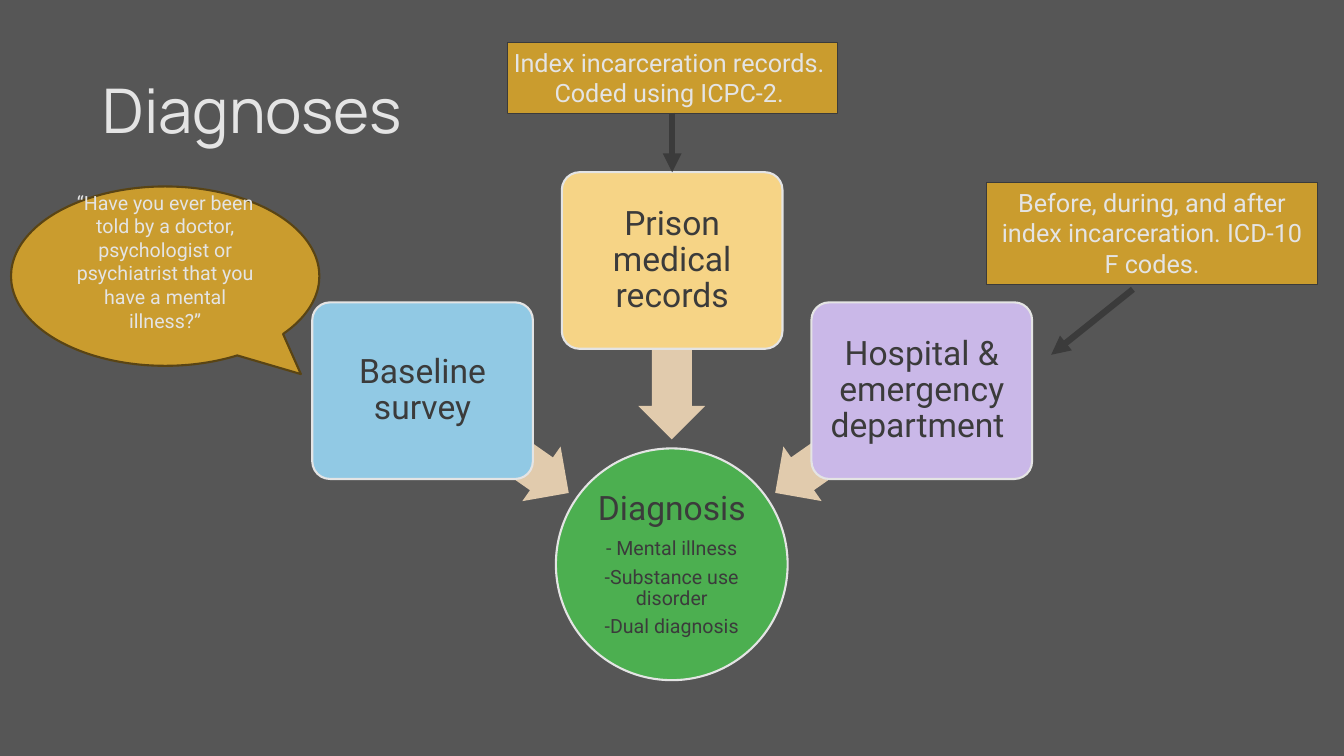
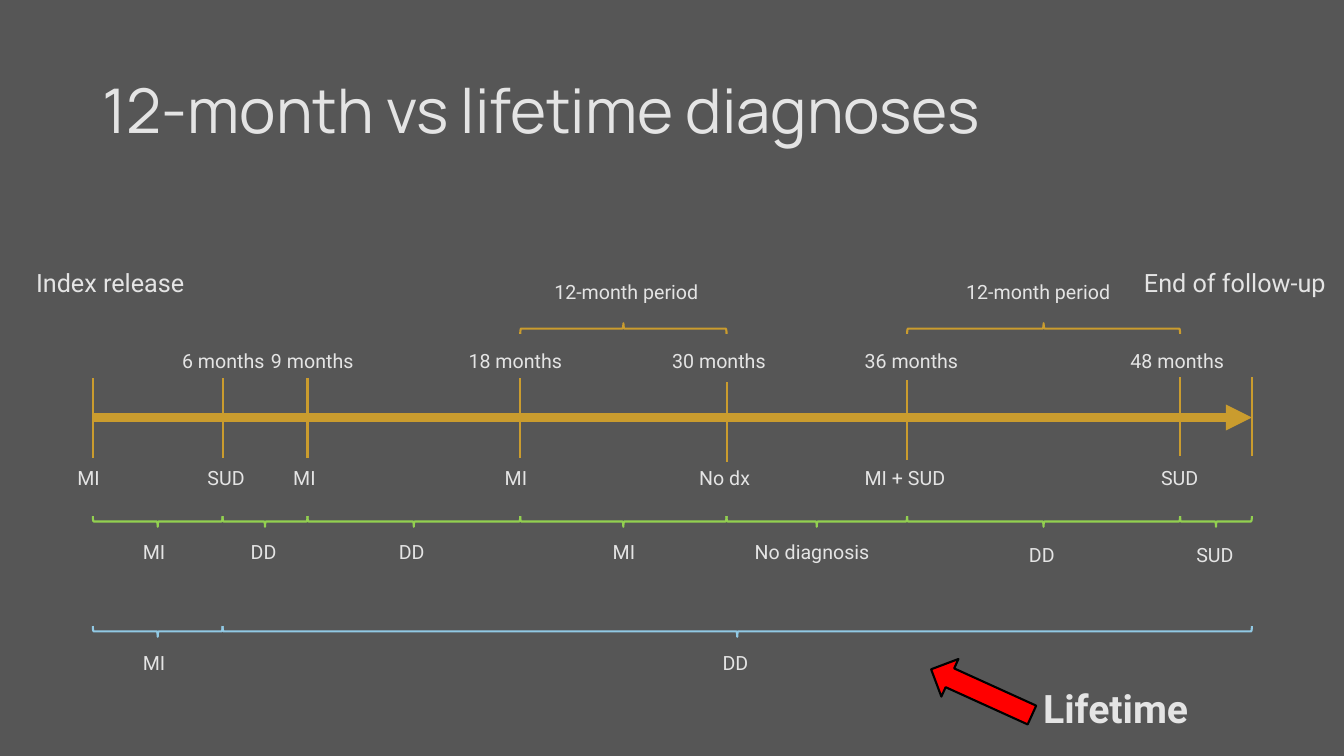
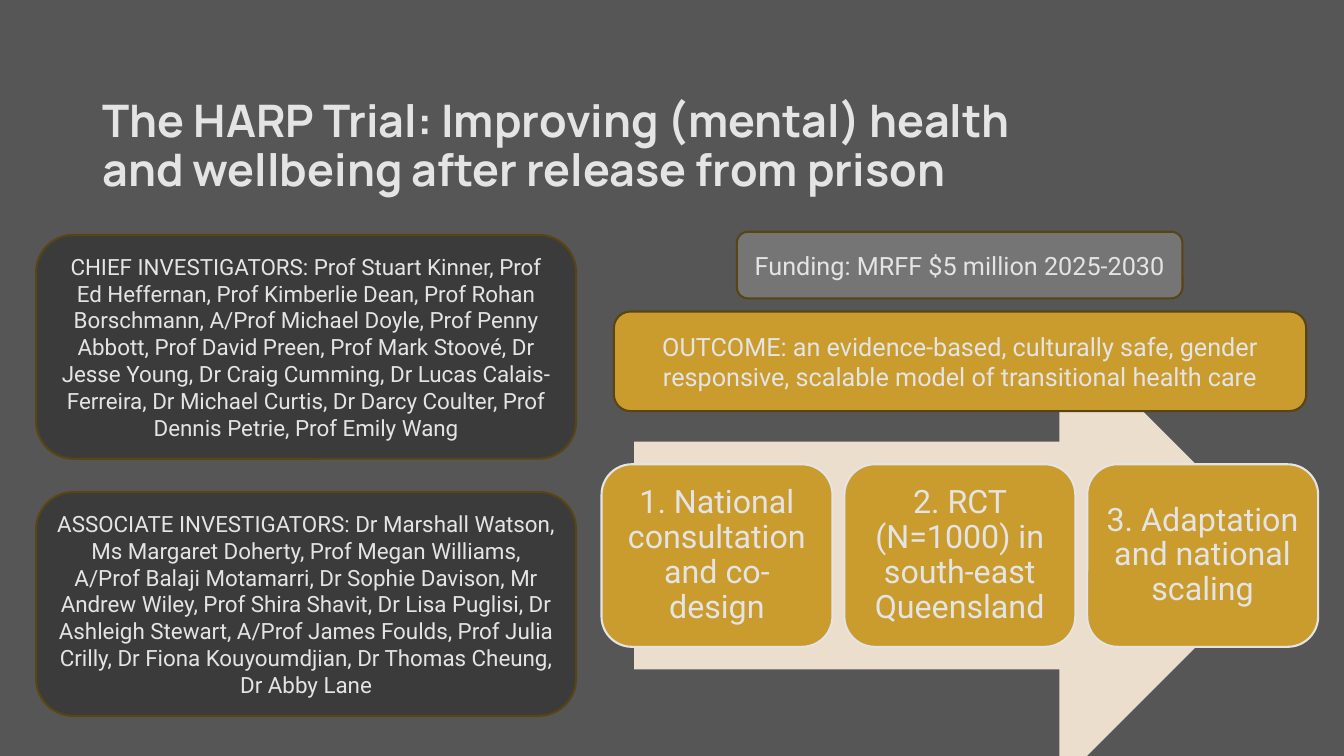
"""Three slides on diagnoses after release from prison and the HARP trial."""
from lxml import etree
from pptx import Presentation
from pptx.dml.color import RGBColor
from pptx.enum.shapes import MSO_CONNECTOR, MSO_SHAPE
from pptx.enum.text import MSO_ANCHOR, PP_ALIGN
from pptx.oxml.ns import qn
from pptx.util import Cm, Pt

ELLIPSE, RECT = MSO_SHAPE.OVAL, MSO_SHAPE.RECTANGLE
ROUNDED, BRACE = MSO_SHAPE.ROUNDED_RECTANGLE, MSO_SHAPE.LEFT_BRACE
LEFT_ARROW, RIGHT_ARROW = MSO_SHAPE.LEFT_ARROW, MSO_SHAPE.RIGHT_ARROW
CALLOUT, STRAIGHT = MSO_SHAPE.OVAL_CALLOUT, MSO_CONNECTOR.STRAIGHT
LEFT, CENTER = PP_ALIGN.LEFT, PP_ALIGN.CENTER
TOP, MIDDLE = MSO_ANCHOR.TOP, MSO_ANCHOR.MIDDLE

COLORS = {
    "background": "565656", "light": "E4E4E4", "dark": "3B3B3B", "gold": "CA9C2E",
    "brown": "594414", "green": "4CAF50", "blue": "91C9E4", "yellow": "F6D486",
    "lilac": "CAB8E8", "sand": "E1CBAD", "cream": "ECDECD", "gray": "757575",
    "lime": "92D050", "red": "FF0000", "black": "000000",
}
HEADING_FONT, BODY_FONT = "Manrope", "Roboto"

SOURCES = [
    ("Baseline survey", "blue", 7.62, (10.24, 10.29), 215),
    ("Prison medical records", "yellow", 4.34, (14.68, 7.98), 270),
    ("Hospital & emergency department ", "lilac", 7.62, (19.13, 10.29), 325),
]
DIAGNOSIS = ["Diagnosis", "- Mental illness", "-Substance use disorder", "-Dual diagnosis"]
SURVEY_QUESTION = ("“Have you ever been told by a doctor, psychologist or psychiatrist "
                   "that you have a mental illness?”")
NOTES = [
    (["Before, during, and after index incarceration. ICD-10 F codes."],
     (24.87, 4.6, 8.33, 2.57), True, (28.55, 7.29), (26.49, 8.94)),
    (["Index incarceration records. ", "Coded using ICPC-2. "],
     (12.78, 1.07, 8.33, 1.8), False, (16.94, 2.84), (16.94, 4.34)),
]

TICKS = [(2.34, 9.53), (5.61, 9.53), (7.75, 9.53), (13.11, 9.53),
         (18.31, 9.63), (22.86, 9.58), (29.74, 9.5), (31.55, 9.5)]
TICK_HEIGHT, AXIS_Y = 2, 10.52
BRACES = [
    ("lime", 13.14, 270, [(i, i + 1) for i in range(len(TICKS) - 1)]),
    ("gold", 8.28, 90, [(3, 4), (5, 6)]),
    ("blue", 15.91, 270, [(0, 1), (1, 7)]),
]
LABEL_ROWS = [
    (6.6, 18, [("Index release", 0.66, 5.13), ("End of follow-up", 28.58, 5.92)]),
    (6.93, 14, [("12-month period", 13.72, 4.24), ("12-month period", 24.1, 4.24)]),
    (8.67, 14, [("6 months", 4.34, 3.1), ("9 months", 6.58, 3.1), ("18 months", 11.56, 3.5),
                ("30 months", 16.69, 3.5), ("36 months", 21.54, 3.5),
                ("48 months", 28.24, 3.5)]),
    (11.62, 14, [("MI", 1.7, 1.24), ("SUD", 4.98, 1.6), ("MI", 7.14, 1.24),
                 ("MI", 12.47, 1.24), ("No dx", 17.37, 1.8), ("MI + SUD", 21.54, 2.74),
                 ("SUD", 29.01, 1.47)]),
    (13.49, 14, [("MI", 3.35, 1.24), ("DD", 6.07, 1.24), ("DD", 9.8, 1.24),
                 ("MI", 15.19, 1.24), ("No diagnosis", 18.77, 3.58)]),
    (13.56, 14, [("DD", 25.68, 1.24), ("SUD", 29.9, 1.47)]),
    (16.28, 14, [("MI", 3.35, 1.24), ("DD", 17.96, 1.24)]),
]

STAGES = ["1. National consultation and co-design",
          "2. RCT (N=1000) in south-east Queensland",
          "3. Adaptation and national scaling"]
PANELS = [
    ("Funding: MRFF $5 million 2025-2030", (18.57, 5.84, 11.23, 1.68), "gray", 18),
    ("OUTCOME: an evidence-based, culturally safe, gender responsive, scalable model of "
     "transitional health care", (15.47, 7.85, 17.45, 2.51), "gold", 18),
    ("CHIEF INVESTIGATORS: Prof Stuart Kinner, Prof Ed Heffernan, Prof Kimberlie Dean, "
     "Prof Rohan Borschmann, A/Prof Michael Doyle, Prof Penny Abbott, Prof David Preen, "
     "Prof Mark Stoové, Dr Jesse Young, Dr Craig Cumming, Dr Lucas Calais-Ferreira, "
     "Dr Michael Curtis, Dr Darcy Coulter, Prof Dennis Petrie, Prof Emily Wang",
     (0.91, 5.92, 13.61, 5.64), "dark", 16),
    ("ASSOCIATE INVESTIGATORS: Dr Marshall Watson, Ms Margaret Doherty, Prof Megan Williams, "
     "A/Prof Balaji Motamarri, Dr Sophie Davison, Mr Andrew Wiley, Prof Shira Shavit, "
     "Dr Lisa Puglisi, Dr Ashleigh Stewart, A/Prof James Foulds, Prof Julia Crilly, "
     "Dr Fiona Kouyoumdjian, Dr Thomas Cheung, Dr Abby Lane",
     (0.91, 12.4, 13.61, 5.64), "dark", 16),
]


def rgb(name):
    return RGBColor.from_string(COLORS[name])


def write(shape, lines, sizes, color="light", font=BODY_FONT, bold=False, align=CENTER,
          anchor=MIDDLE, spacing=None, after=0, inset=None, wrap=True):
    frame = shape.text_frame
    frame.word_wrap = wrap
    frame.vertical_anchor = anchor
    if inset is not None:
        frame.margin_left = frame.margin_right = Cm(inset)
        frame.margin_top = frame.margin_bottom = Cm(inset)
    for i, (line, size) in enumerate(zip(lines, sizes)):
        paragraph = frame.add_paragraph() if i else frame.paragraphs[0]
        paragraph.text = line
        paragraph.alignment = align
        if spacing:
            paragraph.line_spacing = spacing
        if after:
            paragraph.space_after = Pt(round(size * after, 1))
        for run in paragraph.runs:
            run.font.name, run.font.size, run.font.bold = font, Pt(size), bold
            run.font.color.rgb = rgb(color)


def add_label(slide, text, box, size, **style):
    label = slide.shapes.add_textbox(*map(Cm, box))
    write(label, [text], [size], **{"align": LEFT, "anchor": TOP, **style})


def add_block(slide, kind, box, fill=None, line=None, width=1.5, rotation=0, adjust=()):
    block = slide.shapes.add_shape(kind, *map(Cm, box))
    block.shadow.inherit = False
    block.rotation = rotation
    for i, value in enumerate(adjust):
        block.adjustments[i] = value
    if fill:
        block.fill.solid()
        block.fill.fore_color.rgb = rgb(fill)
    else:
        block.fill.background()
    if line:
        block.line.color.rgb = rgb(line)
        block.line.width = Pt(width)
    else:
        block.line.fill.background()
    return block


def add_line(slide, start, end, color, width, arrow=False):
    line = slide.shapes.add_connector(STRAIGHT, *map(Cm, (*start, *end)))
    line.line.color.rgb = rgb(color)
    line.line.width = Pt(width)
    if arrow:
        etree.SubElement(line.line._get_or_add_ln(), qn("a:tailEnd"), type="triangle")
    etree.SubElement(line._element.spPr, qn("a:effectLst"))


def new_slide(deck, title, size=44, top=1.02, bold=False):
    slide = deck.slides.add_slide(deck.slide_layouts[6])
    add_label(slide, title, (2.34, top, 29.21, 3.68), size, font=HEADING_FONT, bold=bold,
              anchor=MIDDLE, spacing=0.9)
    return slide


def build_diagnoses(deck):
    slide = new_slide(deck, "Diagnoses")
    circle = add_block(slide, ELLIPSE, (14.01, 11.3, 5.84, 5.84), "green", "light")
    write(circle, DIAGNOSIS, [24, 14, 14, 14], "dark", spacing=0.9, after=0.35, inset=0.05)
    for i, (name, fill, top, arrow_at, angle) in enumerate(SOURCES):
        add_block(slide, LEFT_ARROW, (*arrow_at, 4.5, 1.68), "sand", rotation=angle,
                  adjust=(0.6, 0.5))
        source = add_block(slide, ROUNDED, (7.87 + 6.29 * i, top, 5.56, 4.45), fill, "light",
                           adjust=(0.1,))
        write(source, [name], [24], "dark", spacing=0.9, inset=0.13)
    question = add_block(slide, CALLOUT, (0.28, 4.7, 7.77, 4.52), "gold", "brown",
                         adjust=(0.44, 0.546))
    write(question, [SURVEY_QUESTION], [14])
    question.text_frame.margin_bottom = Cm(0.87)
    for lines, box, wrap, start, end in NOTES:
        note = add_block(slide, RECT, box, "gold", "dark", 0.75)
        write(note, lines, [18] * len(lines), anchor=TOP, wrap=wrap)
        add_line(slide, start, end, "dark", 4.5, arrow=True)


def build_timeline(deck):
    slide = new_slide(deck, "12-month vs lifetime diagnoses")
    add_line(slide, (TICKS[0][0], AXIS_Y), (TICKS[-1][0], AXIS_Y), "gold", 6.25, arrow=True)
    for x, top in TICKS:
        add_line(slide, (x, top), (x, top + TICK_HEIGHT), "gold", 1.5)
    depth = 0.27
    for color, middle, angle, spans in BRACES:
        for first, last in spans:
            start, end = TICKS[first][0], TICKS[last][0]
            length = end - start
            box = ((start + end - depth) / 2, middle - length / 2, depth, length)
            add_block(slide, BRACE, box, line=color, rotation=angle)
    for top, size, labels in LABEL_ROWS:
        for text, left, width in labels:
            add_label(slide, text, (left, top, width, 0.86), size)
    add_block(slide, RIGHT_ARROW, (23.34, 16.92, 2.79, 1.04), "red", "black", rotation=204.4)
    add_label(slide, "Lifetime", (26.04, 17.12, 4.65, 1.45), 28, bold=True)


def build_trial(deck):
    slide = new_slide(deck, "The HARP Trial: Improving (mental) health\v"
                      "and wellbeing after release from prison", 32, 1.88, True)
    add_block(slide, RIGHT_ARROW, (15.98, 8.26, 16.46, 11.48), "cream")
    for i, name in enumerate(STAGES):
        stage = add_block(slide, ROUNDED, (15.16 + 6.12 * i, 11.7, 5.82, 4.6), "gold", "light")
        write(stage, [name], [23], spacing=0.9, inset=0.25)
    for text, box, fill, size in PANELS:
        write(add_block(slide, ROUNDED, box, fill, "brown"), [text], [size])


def main():
    deck = Presentation()
    deck.slide_width, deck.slide_height = Cm(33.87), Cm(19.05)
    backdrop = deck.slide_master.background.fill
    backdrop.solid()
    backdrop.fore_color.rgb = rgb("background")
    build_diagnoses(deck)
    build_timeline(deck)
    build_trial(deck)
    deck.save("out.pptx")


if __name__ == "__main__":
    main()
